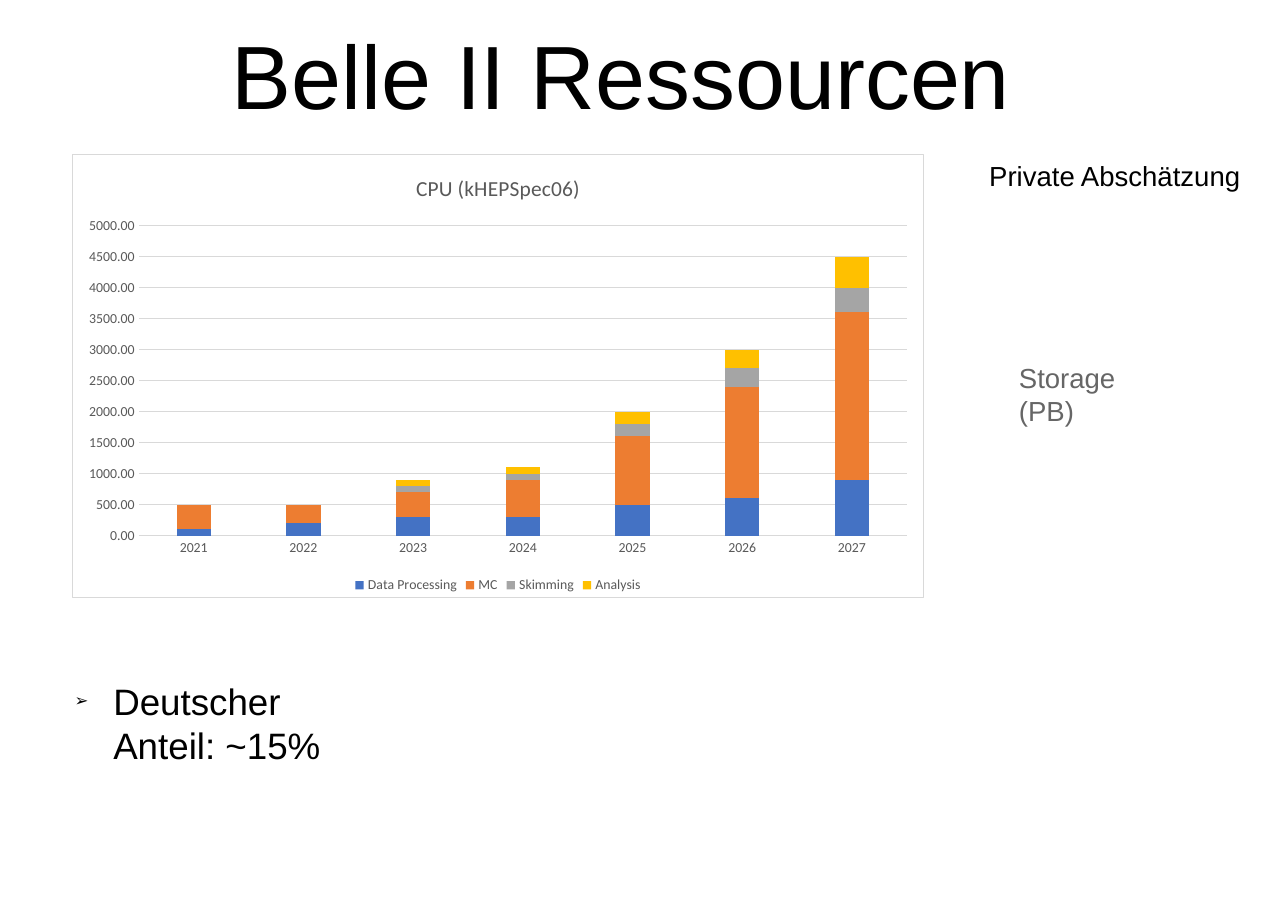
from pptx import Presentation
from pptx.chart.data import CategoryChartData
from pptx.dml.color import RGBColor
from pptx.enum.chart import XL_CHART_TYPE, XL_LEGEND_POSITION, XL_TICK_MARK
from pptx.enum.text import MSO_ANCHOR, PP_ALIGN
from pptx.oxml import parse_xml
from pptx.oxml.ns import nsdecls
from pptx.util import Inches, Pt

BLACK = RGBColor(0x00, 0x00, 0x00)
GREY = RGBColor(0x66, 0x66, 0x66)
LABEL = RGBColor(0x59, 0x59, 0x59)
RULE = RGBColor(0xD9, 0xD9, 0xD9)
BLUE = RGBColor(0x44, 0x72, 0xC4)
ORANGE = RGBColor(0xED, 0x7D, 0x31)
SILVER = RGBColor(0xA5, 0xA5, 0xA5)
GOLD = RGBColor(0xFF, 0xC0, 0x00)

YEARS = [str(year) for year in range(2021, 2028)]
CPU = [
    ("Data Processing", BLUE, (100, 200, 300, 300, 500, 600, 900)),
    ("MC", ORANGE, (400, 300, 400, 600, 1100, 1800, 2700)),
    ("Skimming", SILVER, (0, 0, 100, 100, 200, 300, 400)),
    ("Analysis", GOLD, (0, 0, 100, 100, 200, 300, 500)),
]


def style(font, size, color, name="Arial"):
    font.size = Pt(size)
    font.name = name
    font.bold = False
    font.color.rgb = color


def add_text(slide, text, box, size, color=BLACK, wrap=True):
    shape = slide.shapes.add_textbox(*map(Inches, box))
    frame = shape.text_frame
    frame.text = text
    frame.word_wrap = wrap
    for run in frame.paragraphs[0].runs:
        style(run.font, size, color)
    return frame


def add_title(slide, text):
    frame = add_text(slide, text, (0.57, 0.17, 10.13, 0.99), 58.7)
    frame.margin_left = frame.margin_right = 0
    frame.margin_top = frame.margin_bottom = 0
    frame.vertical_anchor = MSO_ANCHOR.MIDDLE
    frame.paragraphs[0].alignment = PP_ALIGN.CENTER


def add_bullet(slide, text, box):
    para = add_text(slide, text, box, 24).paragraphs[0]
    props = para._p.get_or_add_pPr()
    props.set("marL", str(Inches(0.47)))
    props.set("indent", str(Inches(-0.35)))
    for tag in (
        f'<a:buClr {nsdecls("a")}><a:srgbClr val="{BLACK}"/></a:buClr>',
        f'<a:buSzPct {nsdecls("a")} val="45000"/>',
        f'<a:buFont {nsdecls("a")} typeface="Arial"/>',
        f'<a:buChar {nsdecls("a")} char="➢"/>',
    ):
        props.append(parse_xml(tag))


def style_axis(axis):
    axis.major_tick_mark = XL_TICK_MARK.NONE
    axis.minor_tick_mark = XL_TICK_MARK.NONE
    style(axis.tick_labels.font, 9, LABEL, "Calibri")


def add_frame(chart):
    """Give the chart area a white fill and a thin grey border."""
    chart._chartSpace.chart.addnext(parse_xml(
        f'<c:spPr {nsdecls("c", "a")}>'
        '<a:solidFill><a:srgbClr val="FFFFFF"/></a:solidFill>'
        f'<a:ln w="{Pt(0.75)}"><a:solidFill><a:srgbClr val="{RULE}"/>'
        '</a:solidFill></a:ln></c:spPr>'))


def add_cpu(slide):
    data = CategoryChartData(number_format="0.00")
    data.categories = YEARS
    for name, _, values in CPU:
        data.add_series(name, values)
    box = map(Inches, (0.65, 1.4, 7.74, 4.03))
    chart = slide.shapes.add_chart(
        XL_CHART_TYPE.COLUMN_STACKED, *box, data).chart
    style(chart.font, 10, BLACK)
    add_frame(chart)

    title = chart.chart_title
    title.text_frame.text = "CPU (kHEPSpec06)"
    title.include_in_layout = False
    style(title.text_frame.paragraphs[0].runs[0].font, 14, LABEL, "Calibri")

    chart.has_legend = True
    chart.legend.position = XL_LEGEND_POSITION.BOTTOM
    chart.legend.include_in_layout = False
    style(chart.legend.font, 9, LABEL, "Calibri")

    plot = chart.plots[0]
    plot.gap_width = 219
    plot.overlap = 100
    plot.vary_by_categories = False
    for series, (_, color, _) in zip(plot.series, CPU):
        series.format.fill.solid()
        series.format.fill.fore_color.rgb = color

    years, power = chart.category_axis, chart.value_axis
    style_axis(years)
    style_axis(power)
    power.minimum_scale, power.maximum_scale = 0, 5000
    power.major_unit = 500
    power.tick_labels.number_format = "0.00"
    power.tick_labels.number_format_is_linked = False
    power.format.line.fill.background()
    for line in (years.format.line, power.major_gridlines.format.line):
        line.color.rgb = RULE
        line.width = Pt(0.75)


def main():
    deck = Presentation()
    deck.slide_width, deck.slide_height = Inches(11.69), Inches(8.26)
    slide = deck.slides.add_slide(deck.slide_layouts[6])
    add_title(slide, "Belle II Ressourcen")
    add_bullet(slide, "Deutscher \vAnteil: ~15%", (0.46, 6.11, 10.36, 0.93))
    add_cpu(slide)
    add_text(slide, "Storage (PB)", (9.15, 3.23, 1.6, 0.7), 18, GREY)
    add_text(slide, "Private Abschätzung", (8.88, 1.39, 2.5, 0.4), 18,
             wrap=False)
    deck.save("out.pptx")


if __name__ == "__main__":
    main()
